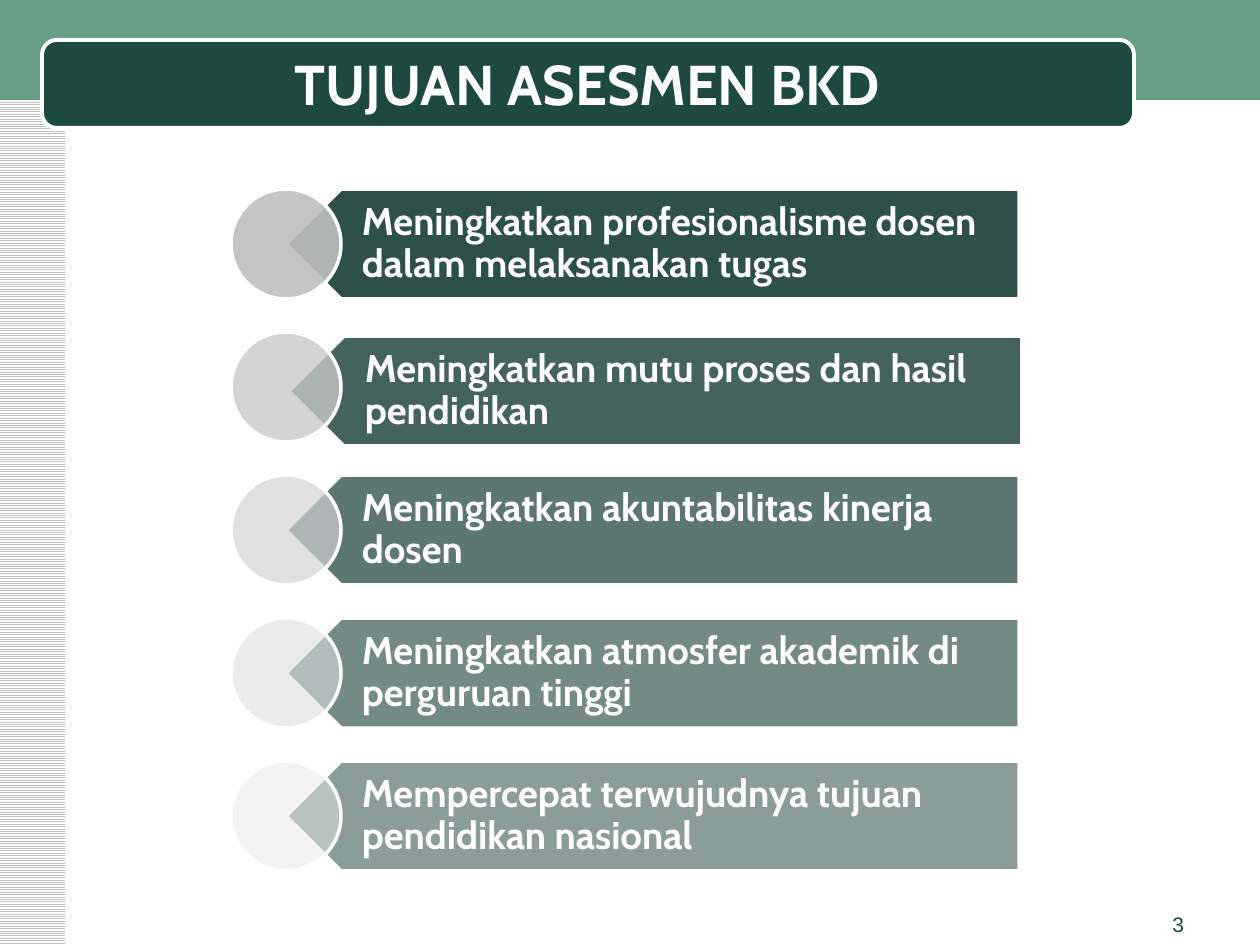
from dataclasses import dataclass

from lxml.etree import SubElement
from pptx import Presentation
from pptx.dml.color import RGBColor
from pptx.enum.dml import MSO_PATTERN
from pptx.enum.shapes import MSO_SHAPE
from pptx.enum.text import MSO_ANCHOR, PP_ALIGN
from pptx.oxml.ns import qn
from pptx.shapes.autoshape import Shape
from pptx.slide import Slide
from pptx.util import Emu, Pt

EMU_PER_PX = 914400 / 126

WHITE = RGBColor(0xFF, 0xFF, 0xFF)
TITLE_WHITE = RGBColor(0xFE, 0xFE, 0xFE)
STRIPE_GRAY = RGBColor(0xC0, 0xC0, 0xC0)
BAND_GREEN = RGBColor(0x66, 0x9E, 0x86)
DARK_GREEN = RGBColor(0x1D, 0x49, 0x40)
ARROW_GREEN = RGBColor(0x17, 0x3D, 0x35)

ROW_TOP = 189
ROW_PITCH = 143
ROW_HEIGHT = 110


@dataclass(frozen=True)
class Area:
    left: int
    top: int
    width: int
    height: int


@dataclass(frozen=True)
class Goal:
    text: str
    circle_color: RGBColor
    opacity: int
    shift_x: int = 0
    shift_y: int = 0


GOALS = [
    Goal("Meningkatkan profesionalisme dosen dalam melaksanakan tugas",
         RGBColor(0xBD, 0xC0, 0xBF), 90),
    Goal("Meningkatkan mutu proses dan hasil pendidikan",
         RGBColor(0xC8, 0xCA, 0xC9), 80, shift_x=3, shift_y=4),
    Goal("Meningkatkan akuntabilitas kinerja dosen",
         RGBColor(0xD2, 0xD4, 0xD4), 70),
    Goal("Meningkatkan atmosfer akademik di perguruan tinggi",
         RGBColor(0xDD, 0xDE, 0xDE), 60),
    Goal("Mempercepat terwujudnya tujuan pendidikan nasional",
         RGBColor(0xE8, 0xE9, 0xE8), 50),
]


def px(length: int) -> Emu:
    return Emu(round(length * EMU_PER_PX))


def place(area: Area) -> tuple[Emu, Emu, Emu, Emu]:
    return px(area.left), px(area.top), px(area.width), px(area.height)


def add_shape(page: Slide, kind: MSO_SHAPE, area: Area, color: RGBColor,
              opacity: int = 100, line_width: float = 0) -> Shape:
    shape = page.shapes.add_shape(kind, *place(area))
    shape.shadow.inherit = False
    shape.fill.solid()
    shape.fill.fore_color.rgb = color
    if opacity < 100:
        color_node = shape.fill._xPr.find(qn("a:solidFill"))[0]
        SubElement(color_node, qn("a:alpha"), val=str(opacity * 1000))
    if line_width:
        shape.line.color.rgb = WHITE
        shape.line.width = Pt(line_width)
    else:
        shape.line.fill.background()
    return shape


def add_text(page: Slide, text: str, area: Area, *, size: int, color: RGBColor,
             font: str = "Cabin", bold: bool = False,
             align: PP_ALIGN = PP_ALIGN.LEFT,
             anchor: MSO_ANCHOR = MSO_ANCHOR.MIDDLE,
             line_spacing: float = 1.0,
             margins: tuple[int, int, int, int] = (13, 6, 13, 6)) -> Shape:
    box = page.shapes.add_textbox(*place(area))
    frame = box.text_frame
    frame.word_wrap = True
    frame.vertical_anchor = anchor
    (frame.margin_left, frame.margin_top,
     frame.margin_right, frame.margin_bottom) = map(px, margins)
    para = frame.paragraphs[0]
    para.alignment = align
    para.line_spacing = line_spacing
    span = para.add_run()
    span.text = text
    span.font.name = font
    span.font.size = Pt(size)
    span.font.bold = bold
    span.font.color.rgb = color
    return box


def add_goal(page: Slide, goal: Goal, top: int) -> None:
    arrow_top = top + goal.shift_y
    arrow = add_shape(page, MSO_SHAPE.PENTAGON,
                      Area(286 + goal.shift_x, arrow_top, 733, ROW_HEIGHT),
                      ARROW_GREEN, goal.opacity, line_width=2)
    arrow.rotation = 180
    add_text(page, goal.text,
             Area(313 + goal.shift_x, arrow_top, 706, ROW_HEIGHT),
             size=22, color=WHITE, bold=True, line_spacing=0.9,
             margins=(49, 11, 21, 11))
    add_shape(page, MSO_SHAPE.OVAL, Area(231, top, ROW_HEIGHT, ROW_HEIGHT),
              goal.circle_color, goal.opacity, line_width=2)


def add_frame(page: Slide) -> None:
    stripes = add_shape(page, MSO_SHAPE.RECTANGLE, Area(0, 0, 65, 945), WHITE)
    stripes.fill.patterned()
    stripes.fill.pattern = MSO_PATTERN.LIGHT_HORIZONTAL
    stripes.fill.fore_color.rgb = STRIPE_GRAY
    stripes.fill.back_color.rgb = WHITE
    add_shape(page, MSO_SHAPE.RECTANGLE, Area(0, 0, 1260, 100), BAND_GREEN)
    add_shape(page, MSO_SHAPE.ROUNDED_RECTANGLE, Area(42, 40, 1092, 88),
              DARK_GREEN, line_width=2.25)


def main() -> None:
    deck = Presentation()
    deck.slide_width = px(1260)
    deck.slide_height = px(945)
    page = deck.slides.add_slide(deck.slide_layouts[6])
    add_frame(page)
    add_text(page, "TUJUAN ASESMEN BKD", Area(54, 42, 1067, 83),
             size=32, color=TITLE_WHITE, bold=True, align=PP_ALIGN.CENTER)
    for index, goal in enumerate(GOALS):
        add_goal(page, goal, ROW_TOP + index * ROW_PITCH)
    add_text(page, "3", Area(903, 906, 294, 34), size=12, color=DARK_GREEN,
             font="Arial", align=PP_ALIGN.RIGHT, anchor=MSO_ANCHOR.TOP)
    deck.save("out.pptx")


if __name__ == "__main__":
    main()
